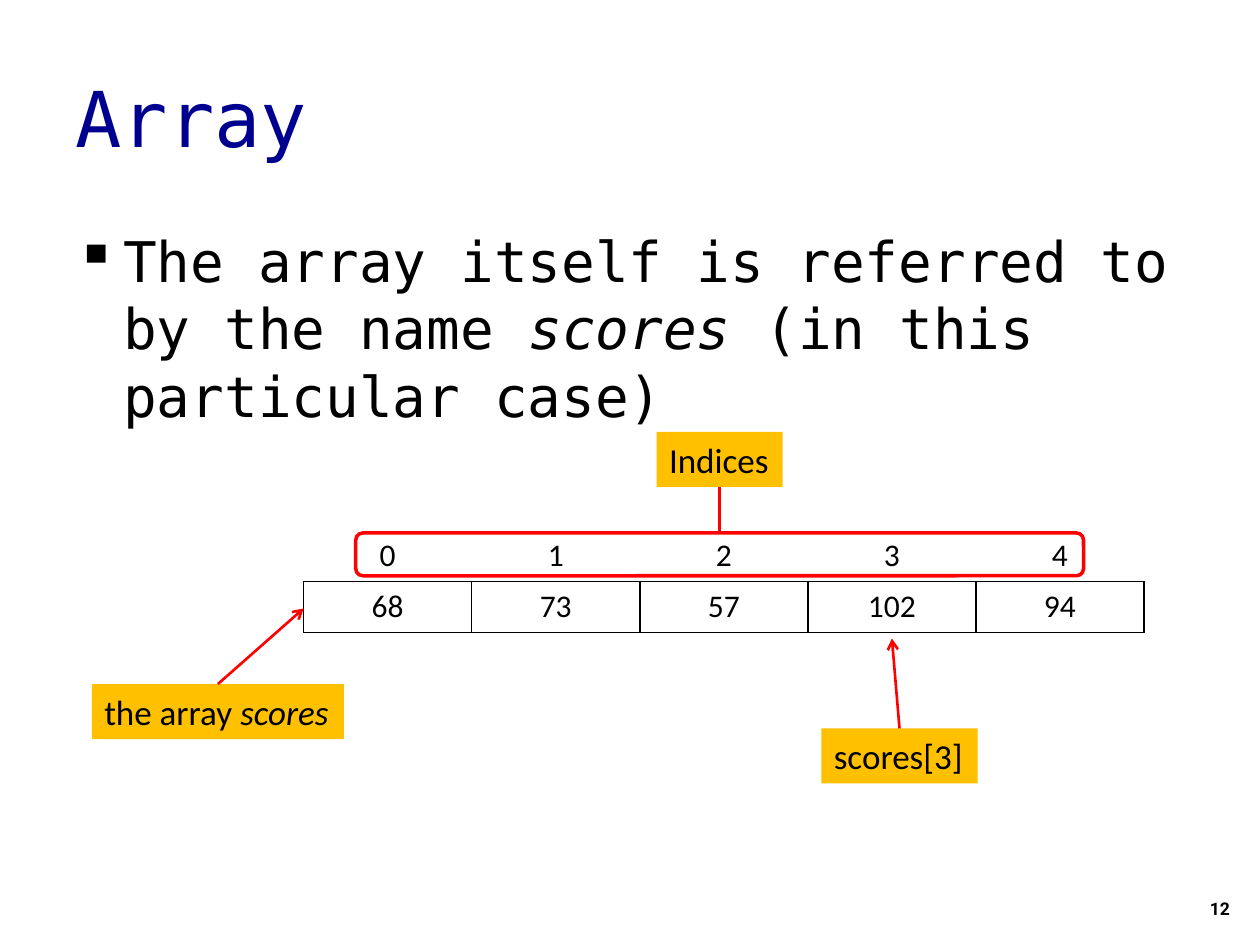
from dataclasses import dataclass

from lxml import etree
from pptx import Presentation
from pptx.dml.color import RGBColor
from pptx.enum.shapes import MSO_CONNECTOR, MSO_SHAPE
from pptx.enum.text import MSO_ANCHOR, PP_ALIGN
from pptx.oxml.ns import qn
from pptx.util import Inches, Pt

STRAIGHT = MSO_CONNECTOR.STRAIGHT
RECTANGLE = MSO_SHAPE.RECTANGLE
ROUNDED = MSO_SHAPE.ROUNDED_RECTANGLE
MIDDLE, TOP = MSO_ANCHOR.MIDDLE, MSO_ANCHOR.TOP
LEFT, CENTER, RIGHT = PP_ALIGN.LEFT, PP_ALIGN.CENTER, PP_ALIGN.RIGHT
TOP_SIDE, BOTTOM_SIDE = 0, 2

MONO, SANS, NUMBER = "DejaVu Sans Mono", "Calibri", "Roboto"
NAVY, BLACK, RED, AMBER = "000090", "000000", "FF0000", "FFC000"
SCORES = [68, 73, 57, 102, 94]


@dataclass
class Box:
    """A rectangle in EMU that can be divided into a grid."""
    left: int
    top: int
    width: int
    height: int

    def point(self, column, row, columns, rows):
        """Return the position of a grid point."""
        return (int(self.left + column * self.width / columns),
                int(self.top + row * self.height / rows))

    def area(self, column, row, wide, high, columns=100, rows=100):
        """Return the box of a span of grid cells, by default in per cent."""
        return Box(*self.point(column, row, columns, rows),
                   int(wide * self.width / columns), int(high * self.height / rows))

    def bounds(self):
        """Return left, top, width and height."""
        return self.left, self.top, self.width, self.height


def color(value):
    """Turn a hex string into a colour."""
    return RGBColor.from_string(value)


def write(frame, runs, size, font, tint=BLACK, align=LEFT, anchor=TOP, bold=False):
    """Write one paragraph of (text, italic) runs and return it."""
    frame.vertical_anchor = anchor
    paragraph = frame.paragraphs[0]
    paragraph.alignment = align
    paragraph.font.size, paragraph.font.name = Pt(size), font
    paragraph.font.bold = bold
    paragraph.font.color.rgb = color(tint)
    for text, italic in runs:
        run = paragraph.add_run()
        run.text = text
        if italic:
            run.font.italic = True
    return paragraph


def add_text(slide, box, runs, *style, **options):
    """Add a wrapping text box and return its paragraph."""
    frame = slide.shapes.add_textbox(*box.bounds()).text_frame
    frame.word_wrap = True
    return write(frame, runs, *style, **options)


def add_bullet(paragraph, mark):
    """Give a paragraph a hanging bullet."""
    properties = paragraph._p.get_or_add_pPr()
    properties.set("marL", str(Inches(0.38)))
    properties.set("indent", str(-Inches(0.38)))
    etree.SubElement(properties, qn("a:buChar")).set("char", mark)
    properties.append(properties.find(qn("a:defRPr")))


def add_border(cell, sides):
    """Draw thin black lines on the given sides of a cell."""
    properties = cell._tc.get_or_add_tcPr()
    for index, side in enumerate(sides):
        line = etree.Element(qn(f"a:ln{side}"), w=str(Pt(1)))
        fill = etree.SubElement(line, qn("a:solidFill"))
        etree.SubElement(fill, qn("a:srgbClr"), val=BLACK)
        properties.insert(index, line)


def add_array_table(slide, box):
    """Add the row of indices above the row of scores."""
    table = slide.shapes.add_table(2, len(SCORES), *box.bounds()).table
    table.first_row = table.horz_banding = False
    for row, (values, sides) in enumerate([(range(len(SCORES)), "B"), (SCORES, "LRTB")]):
        for column, value in enumerate(values):
            cell = table.cell(row, column)
            cell.fill.background()
            write(cell.text_frame, [(str(value), False)], 18, SANS, align=CENTER)
            add_border(cell, sides)


def add_label(slide, box, runs):
    """Add an amber label."""
    label = slide.shapes.add_shape(RECTANGLE, *box.bounds())
    label.shadow.inherit = False
    label.fill.solid()
    label.fill.fore_color.rgb = color(AMBER)
    label.line.fill.background()
    label.text_frame.word_wrap = False
    write(label.text_frame, runs, 20, SANS)
    return label


def add_index_frame(slide, box):
    """Add the red outline around the indices."""
    frame = slide.shapes.add_shape(ROUNDED, *box.bounds())
    frame.shadow.inherit = False
    frame.fill.background()
    frame.line.color.rgb = color(RED)
    frame.line.width = Pt(2)
    return frame


def add_pointer(slide, label, side, tip, arrow=True):
    """Add a red line from the side of a label to a point."""
    pointer = slide.shapes.add_connector(STRAIGHT, 0, 0, *tip)
    pointer.begin_connect(label, side)
    pointer.line.color.rgb = color(RED)
    pointer.line.width = Pt(1.5)
    if arrow:
        outline = pointer._element.spPr.find(qn("a:ln"))
        etree.SubElement(outline, qn("a:tailEnd"), type="arrow")
    etree.SubElement(pointer._element.spPr, qn("a:effectLst"))
    return pointer


def add_array_figure(slide, box):
    """Add the table and its labels on a grid of the table's cells."""
    grid = len(SCORES), 2
    add_array_table(slide, box)
    indices = add_label(slide, box.area(2.1, -1.93, 0.75, 1.08, *grid), [("Indices", False)])
    frame = add_index_frame(slide, box.area(0.31, 0.05, 4.33, 0.84, *grid))
    stem = add_pointer(slide, indices, BOTTOM_SIDE, box.point(2.5, 0, *grid), arrow=False)
    stem.end_connect(frame, TOP_SIDE)
    labels = [((-1.26, 3.01, 1.5, 1.08), [("the array ", False), ("scores", True)], (0, 1.53)),
              ((3.08, 3.88, 0.93, 1.08), [("scores[3]", False)], (3.5, 2.12))]
    for place, runs, tip in labels:
        label = add_label(slide, box.area(*place, *grid), runs)
        add_pointer(slide, label, TOP_SIDE, box.point(*tip, *grid))


def add_array_slide(presentation, box):
    """Add the slide with its title, statement, figure and number."""
    slide = presentation.slides.add_slide(presentation.slide_layouts[6])
    add_text(slide, box.area(5, 4, 90, 16.67), [("Array", False)], 44, MONO, NAVY, anchor=MIDDLE)
    statement = add_text(slide, box.area(5, 23.33, 90, 66), [
        ("The array itself is referred to by the name ", False),
        ("scores", True),
        (" (in this particular case)", False)], 32, MONO)
    statement.space_before = Pt(12.2)
    add_bullet(statement, "▪")
    add_text(slide, box.area(94.6, 93.47, 4, 5.33), [("12", False)], 10, NUMBER,
             align=RIGHT, anchor=MIDDLE, bold=True)
    add_array_figure(slide, box.area(24.1, 56.13, 66.7, 10.8))


def main():
    """Build and save the presentation."""
    presentation = Presentation()
    presentation.slide_width, presentation.slide_height = Inches(10), Inches(7.5)
    add_array_slide(presentation, Box(0, 0, presentation.slide_width, presentation.slide_height))
    presentation.save("out.pptx")


if __name__ == "__main__":
    main()
